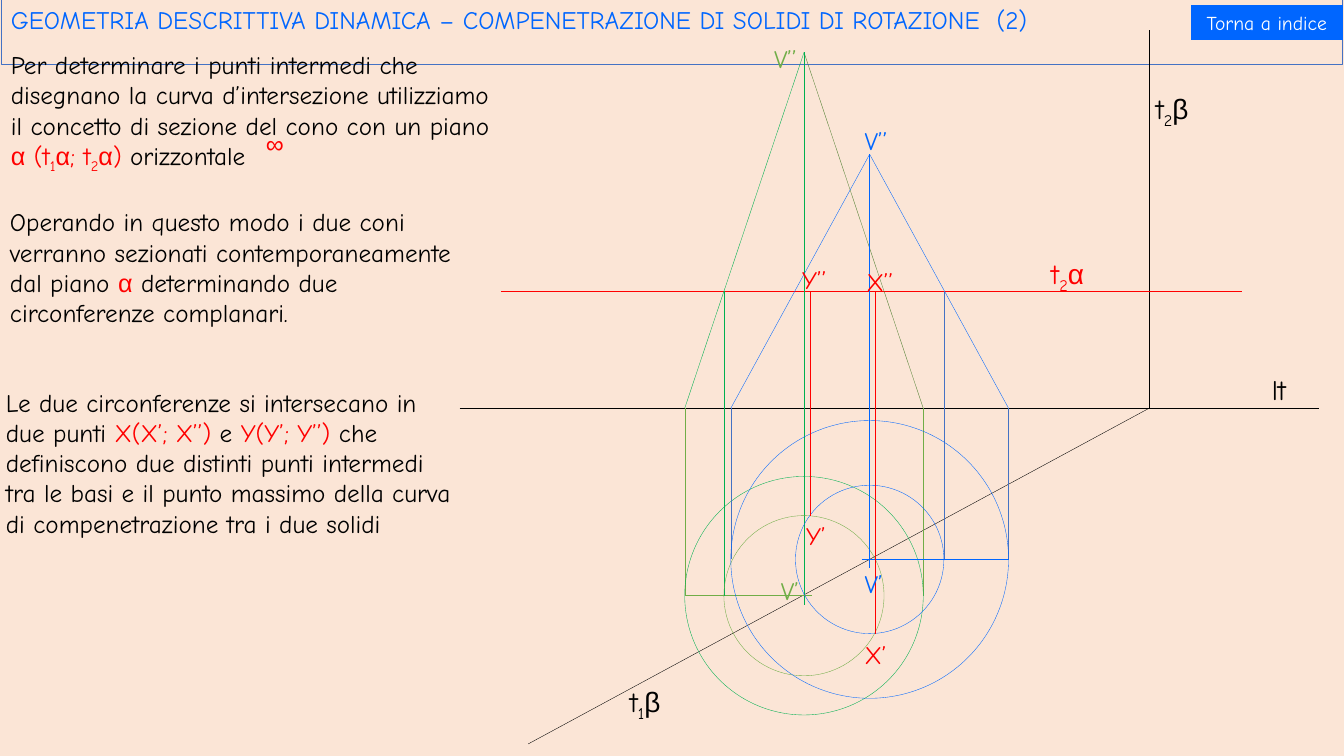
import dataclasses
import itertools

import pptx
import pptx.dml.color
import pptx.enum.shapes
import pptx.enum.text
import pptx.oxml
import pptx.oxml.ns
import pptx.util

Pt = pptx.util.Pt
SHAPES = pptx.enum.shapes.MSO_SHAPE
SUBSCRIPTS = {"₁": "1", "₂": "2"}
GREEK = "αβ∞"


@dataclasses.dataclass(frozen=True)
class Theme:
    background: str = "FBE5D6"
    black: str = "000000"
    white: str = "FFFFFF"
    red: str = "FF0000"
    blue: str = "0066FF"
    steel: str = "4472C4"
    green: str = "00B050"
    olive: str = "70AD47"
    moss: str = "548235"
    font: str = "Comic Neue"
    greek_font: str = "Arial"
    body_size: float = 18
    trace_size: float = 20
    button_size: float = 14
    hairline: float = 0.25


@dataclasses.dataclass(frozen=True)
class Cone:
    axis: float
    apex: float
    centre: float
    radius: float
    section_radius: float
    overrun: float  # length of the axis beyond the base centre
    side: int  # side of the drawn radius: -1 left, 1 right
    main: str
    right_edge: str
    section: str
    section_drop: str
    base_drop: str
    base_line: str


def rgb(colour):
    return pptx.dml.color.RGBColor.from_string(colour)


def glyph_kind(character):
    if character in SUBSCRIPTS:
        return "subscript"
    return "greek" if character in GREEK else "latin"


class Drawing:
    def __init__(self, slide, theme):
        self.slide = slide
        self.theme = theme
        slide.background.fill.solid()
        slide.background.fill.fore_color.rgb = rgb(theme.background)

    def line(self, start, end, colour):
        connector = self.slide.shapes.add_connector(
            pptx.enum.shapes.MSO_CONNECTOR.STRAIGHT, *map(Pt, start + end))
        connector.line.color.rgb = rgb(colour)
        connector.line.width = Pt(self.theme.hairline)
        properties = connector._element.spPr
        properties.append(pptx.oxml.parse_xml(
            f"<a:effectLst {pptx.oxml.ns.nsdecls('a')}/>"))

    def shape(self, kind, box, line=None, fill=None):
        shape = self.slide.shapes.add_shape(kind, *map(Pt, box))
        shape.shadow.inherit = False
        if fill:
            shape.fill.solid()
            shape.fill.fore_color.rgb = rgb(fill)
        else:
            shape.fill.background()
        if line:
            shape.line.color.rgb = rgb(line)
            shape.line.width = Pt(self.theme.hairline)
        else:
            shape.line.fill.background()
        return shape

    def circle(self, centre, radius, colour):
        x, y = centre
        self.shape(SHAPES.OVAL, (x - radius, y - radius, 2 * radius, 2 * radius), colour)

    def set_text(self, shape, pieces, size):
        """Fill a shape with (text, colour) pieces; Greek and subscripts get their own runs."""
        shape.text_frame.word_wrap = True
        paragraph = shape.text_frame.paragraphs[0]
        paragraph.font.size = Pt(size)
        for text, colour in pieces:
            for kind, characters in itertools.groupby(text, glyph_kind):
                run = paragraph.add_run()
                run.text = "".join(SUBSCRIPTS.get(c, c) for c in characters)
                run.font.color.rgb = rgb(colour)
                run.font.name = self.theme.greek_font if kind == "greek" else self.theme.font
                if kind == "subscript":
                    run.font._element.set("baseline", "-25000")
        return paragraph

    def text(self, box, pieces, size):
        textbox = self.slide.shapes.add_textbox(*map(Pt, box))
        self.set_text(textbox, pieces, size)
        return textbox

    def banner(self, kind, box, text, colour, size, alignment, line=None, fill=None):
        shape = self.shape(kind, box, line, fill)
        shape.text_frame.vertical_anchor = pptx.enum.text.MSO_ANCHOR.MIDDLE
        paragraph = self.set_text(shape, [(text, colour)], size)
        paragraph.alignment = alignment
        return paragraph

    def cone(self, cone, ground, plane):
        """Draw both projections of a cone and of its section by the horizontal plane."""
        apex, centre = (cone.axis, cone.apex), (cone.axis, cone.centre)
        for side, edge_colour in ((-1, cone.main), (1, cone.right_edge)):
            x = cone.axis + side * cone.radius
            self.line((x, cone.centre), (x, ground), cone.base_drop)
            self.line((x, ground), apex, edge_colour)
        self.line((cone.axis, cone.centre + cone.overrun), apex, cone.main)
        tick = 5.8
        self.line((cone.axis - tick, cone.centre), (cone.axis + tick, cone.centre), cone.base_line)
        self.line((cone.axis + cone.side * tick, cone.centre),
                  (cone.axis + cone.side * cone.radius, cone.centre), cone.base_line)
        x = cone.axis + cone.side * cone.section_radius
        self.line((x, plane), (x, cone.centre), cone.section_drop)
        self.circle(centre, cone.radius, cone.main)
        self.circle(centre, cone.section_radius, cone.section)


def main():
    presentation = pptx.Presentation()
    presentation.slide_width, presentation.slide_height = Pt(960), Pt(540)
    theme = Theme()
    drawing = Drawing(presentation.slides.add_slide(presentation.slide_layouts[6]), theme)
    black, red, blue, olive = theme.black, theme.red, theme.blue, theme.olive
    align = pptx.enum.text.PP_ALIGN

    title = drawing.banner(
        SHAPES.RECTANGLE, (0.7, -15, 958.3, 61),
        "GEOMETRIA DESCRITTIVA DINAMICA – COMPENETRAZIONE DI SOLIDI DI ROTAZIONE  (2)",
        blue, theme.body_size, align.LEFT, line=theme.steel)
    title.line_spacing = 0.9

    ground, plane, fold = 291.6, 208, 820.8
    drawing.line((328.3, ground), (942.5, ground), black)
    drawing.line((377.3, 531.4), (fold, ground), black)
    drawing.line((fold, ground), (fold, 21.6), black)
    drawing.line((357.8, plane), (887, plane), red)
    drawing.cone(Cone(axis=574.3, apex=37.4, centre=425.5, radius=85.2, section_radius=57.2,
                      overrun=6.5, side=-1, main=theme.green, right_edge=theme.moss,
                      section=olive, section_drop=theme.green, base_drop=olive,
                      base_line=olive), ground, plane)
    drawing.cone(Cone(axis=621.2, apex=110.2, centre=399.6, radius=99.2, section_radius=53,
                      overrun=5.8, side=1, main=blue, right_edge=blue,
                      section=blue, section_drop=theme.steel, base_drop=theme.steel,
                      base_line=blue), ground, plane)
    for x, bottom in ((578.9, 368.6), (625, 452.9)):
        drawing.line((x, plane), (x, bottom), red)

    concept = drawing.text((0.7, 31.7, 356.4, 94.3), [
        ("Per determinare i punti intermedi che disegnano la curva d’intersezione "
         "utilizziamo il concetto di sezione del cono con un piano ", black),
        ("α (t₁α; t₂α) ", red), ("orizzontale", black)], theme.body_size)
    infinity = drawing.text((182.9, 87.8, 28.1, 22.3), [("∞", red)], theme.body_size)
    drawing.slide.shapes.add_group_shape([concept, infinity])
    drawing.text((0, 144, 351.4, 94.3), [
        ("Operando in questo modo i due coni verranno sezionati contemporaneamente "
         "dal piano ", black), ("α", red),
        (" determinando due circonferenze complanari.", black)], theme.body_size)
    drawing.text((-2.9, 272.9, 332.6, 138.2), [
        ("Le due circonferenze si intersecano in due punti ", black),
        ("X(X’; X’’) ", red), ("e ", black), ("Y(Y’; Y’’) ", red),
        ("che definiscono due distinti punti intermedi tra le basi e il punto massimo "
         "della curva di compenetrazione tra i due solidi", black)], theme.body_size)

    trace_labels = [("lt", 901.4, 262.8, black), ("t₁β", 442.8, 485.3, black),
                    ("t₂β", 818.6, 61.9, black), ("t₂α", 743.8, 180, red)]
    for text, left, top, colour in trace_labels:
        drawing.text((left, top, 44.6, 31.7), [(text, colour)], theme.trace_size)
    point_labels = [("X’", 610.6, 452.9, red), ("Y’", 568.8, 367.9, red),
                    ("X’’", 612, 186.5, red), ("Y’’", 565.9, 185, red),
                    ("V’", 550.8, 407.5, olive), ("V’’", 545.8, 27.4, olive),
                    ("V’", 610.6, 402.5, blue), ("V’’", 610.6, 85.7, blue)]
    for text, left, top, colour in point_labels:
        drawing.text((left, top, 33.8, 28.8), [(text, colour)], theme.body_size)

    drawing.banner(SHAPES.ACTION_BUTTON_CUSTOM, (851, 3.6, 108, 25.2), "Torna a indice",
                   theme.white, theme.button_size, align.CENTER, fill=blue)
    presentation.save("out.pptx")


if __name__ == "__main__":
    main()
